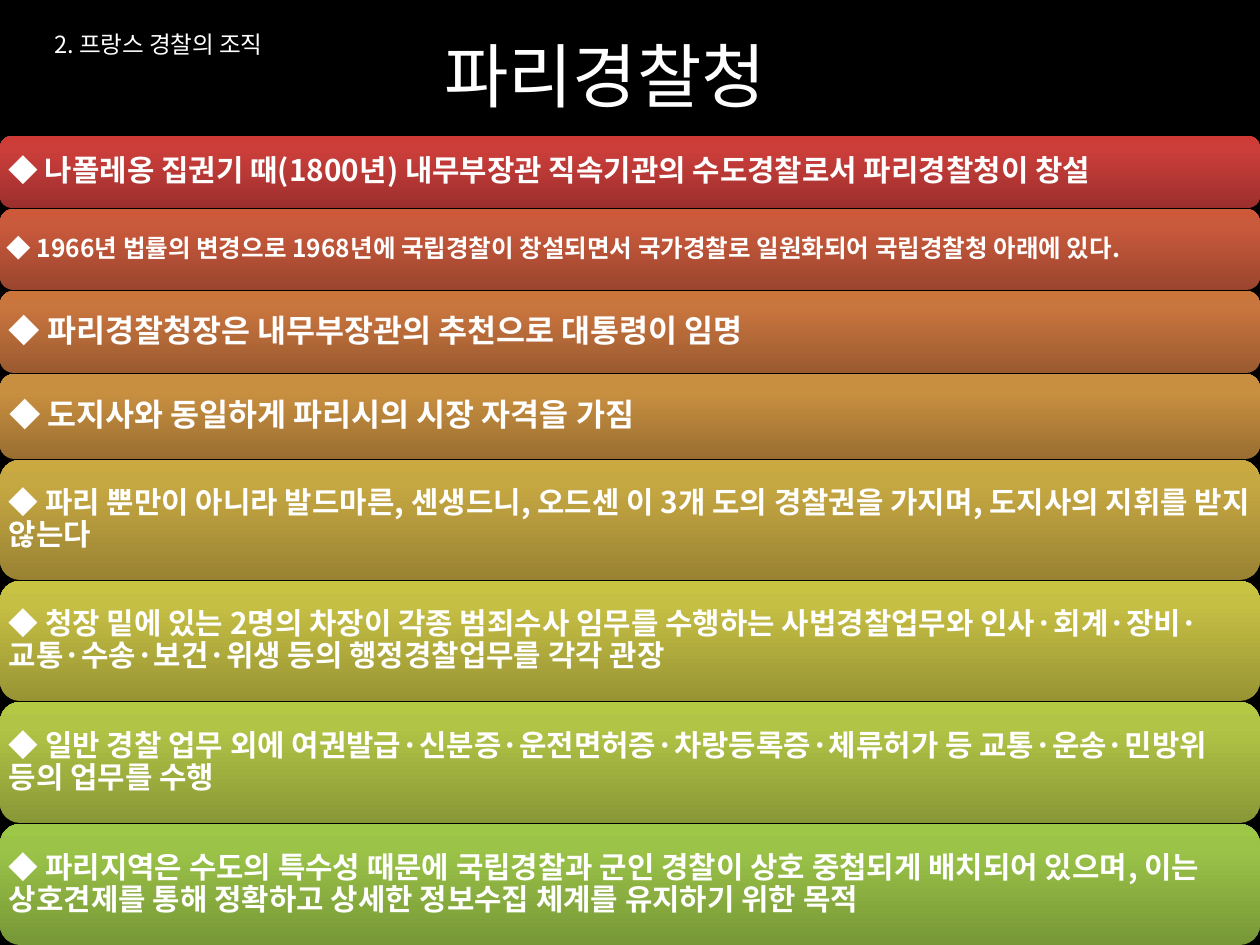
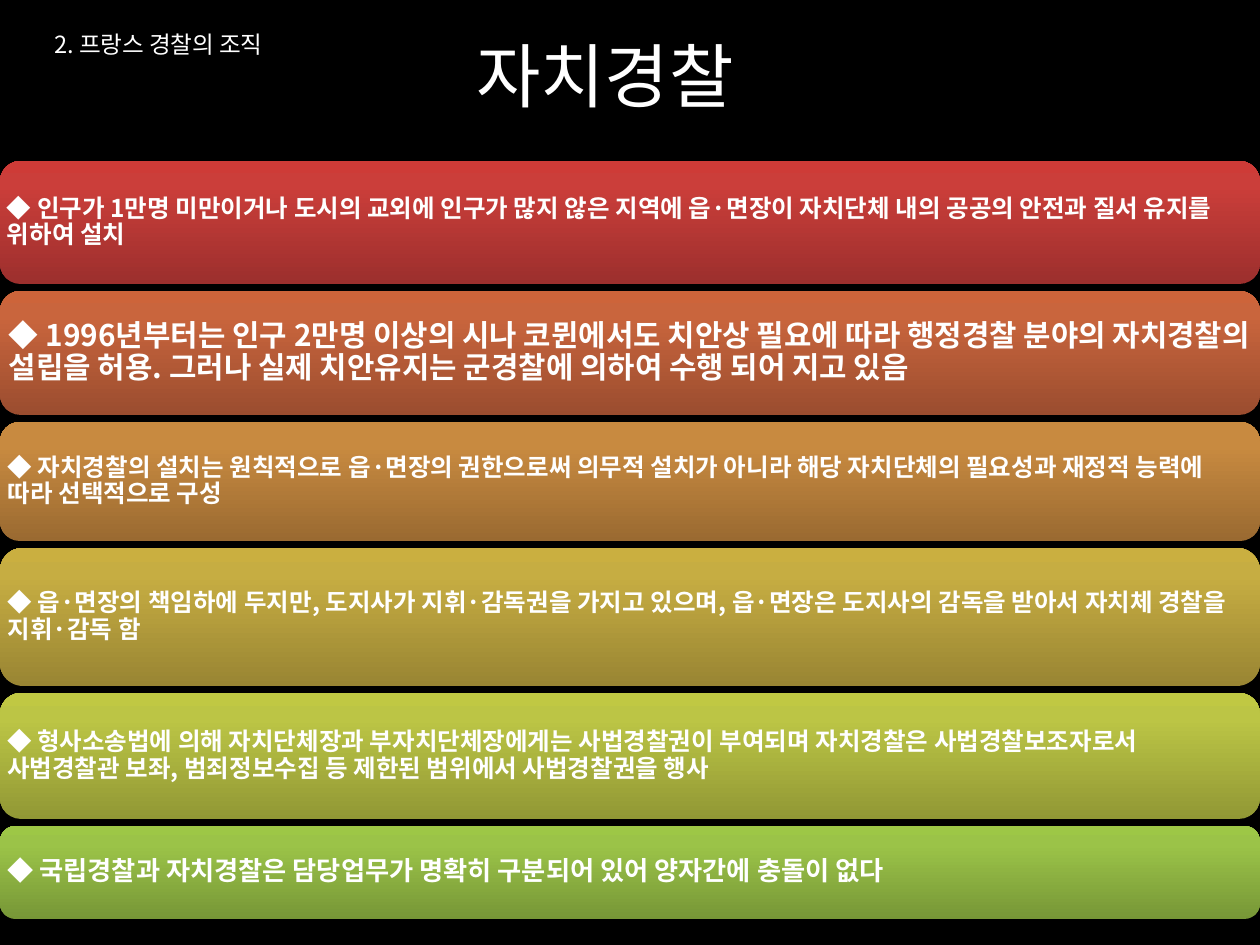
from colorsys import hls_to_rgb, rgb_to_hls
from copy import deepcopy
from dataclasses import dataclass

from lxml.etree import SubElement
from pptx import Presentation
from pptx.dml.color import RGBColor
from pptx.enum.shapes import MSO_SHAPE
from pptx.enum.text import MSO_ANCHOR, MSO_AUTO_SIZE, PP_ALIGN
from pptx.oxml.ns import qn
from pptx.util import Pt

EMU_PER_PX = 914400 / 126
TITLE_ONLY_LAYOUT = 5
ROUND_RECT_TEXT_INSET = 0.29 / 6


@dataclass(frozen=True)
class Theme:
    """Colours, font and type sizes shared by the slides."""

    font: str = "Noto Sans CJK KR"
    text: str = "FFFFFF"
    background: str = "000000"
    shadow: str = "000000"
    title_size: float = 40
    section_size: float = 13.5
    line_spacing: float = 0.9
    band_stops: tuple = (
        (0, "9C2F2D", "779737"),
        (0.8, "CB3E3A", "9BC348"),
        (1, "CE3B37", "9DC746"),
    )


SECTION = "2. 프랑스 경찰의 조직"

PARIS_BANDS = [
    (72, 17, "나폴레옹 집권기 때(1800년) 내무부장관 직속기관의 수도경찰로서 파리경찰청이 창설"),
    (81, 14, "1966년 법률의 변경으로 1968년에 국립경찰이 창설되면서 국가경찰로 일원화되어 국립경찰청 아래에 있다."),
    (82, 18, "파리경찰청장은 내무부장관의 추천으로 대통령이 임명"),
    (85, 18, "도지사와 동일하게 파리시의 시장 자격을 가짐"),
    (120, 17, "파리 뿐만이 아니라 발드마른, 센생드니, 오드센 이 3개 도의 경찰권을 가지며, "
              "도지사의 지휘를 받지 않는다"),
    (120, 17, "청장 밑에 있는 2명의 차장이 각종 범죄수사 임무를 수행하는 사법경찰업무와 "
              "인사·회계·장비·교통·수송·보건·위생 등의 행정경찰업무를 각각 관장"),
    (121, 17, "일반 경찰 업무 외에 여권발급·신분증·운전면허증·차랑등록증·체류허가 등 "
              "교통·운송·민방위 등의 업무를 수행"),
    (121, 17, "파리지역은 수도의 특수성 때문에 국립경찰과 군인 경찰이 상호 중첩되게 배치되어 있으며, "
              "이는 상호견제를 통해 정확하고 상세한 정보수집 체계를 유지하기 위한 목적"),
]

MUNICIPAL_BANDS = [
    (123, 14, "인구가 1만명 미만이거나 도시의 교외에 인구가 많지 않은 지역에 읍·면장이 "
              "자치단체 내의 공공의 안전과 질서 유지를 위하여 설치"),
    (124, 17, "1996년부터는 인구 2만명 이상의 시나 코뮌에서도 치안상 필요에 따라 행정경찰 분야의 "
              "자치경찰의 설립을 허용. 그러나 실제 치안유지는 군경찰에 의하여 수행 되어 지고 있음"),
    (119, 14, "자치경찰의 설치는 원칙적으로 읍·면장의 권한으로써 의무적 설치가 아니라 "
              "해당 자치단체의 필요성과 재정적 능력에 따라 선택적으로 구성"),
    (138, 14, "읍·면장의 책임하에 두지만, 도지사가 지휘·감독권을 가지고 있으며, "
              "읍·면장은 도지사의 감독을 받아서 자치체 경찰을 지휘·감독 함"),
    (126, 14, "형사소송법에 의해 자치단체장과 부자치단체장에게는 사법경찰권이 부여되며 "
              "자치경찰은 사법경찰보조자로서 사법경찰관 보좌, "
              "범죄정보수집 등 제한된 범위에서 사법경찰권을 행사"),
    (93, 15, "국립경찰과 자치경찰은 담당업무가 명확히 구분되어 있어 양자간에 충돌이 없다"),
]


def px(length):
    """Turn pixels into EMU."""
    return round(length * EMU_PER_PX)


def blend_hue(first, last, share):
    """Mix two hex colours along hue, lightness and saturation."""
    start, end = (
        rgb_to_hls(*(channel / 255 for channel in RGBColor.from_string(colour)))
        for colour in (first, last)
    )
    mixed = hls_to_rgb(*(a + (b - a) * share for a, b in zip(start, end)))
    return RGBColor(*(round(channel * 255) for channel in mixed))


class Deck:
    """Holds the style and the current slide, and draws each kind of element."""

    def __init__(self, theme):
        """Start an empty 4:3 presentation."""
        self.theme = theme
        self.slide = None
        self.presentation = Presentation()
        self.presentation.slide_width = px(1260)
        self.presentation.slide_height = px(945)

    def add_slide(self, title, section):
        """Add a slide with its background, section label and title."""
        layout = self.presentation.slide_layouts[TITLE_ONLY_LAYOUT]
        self.slide = self.presentation.slides.add_slide(layout)
        fill = self.slide.background.fill
        fill.solid()
        fill.fore_color.rgb = RGBColor.from_string(self.theme.background)
        self.add_section_label(section)
        self.set_title(title)

    def add_run(self, paragraph, text, size, bold=False):
        """Add one run in the theme font and colour."""
        run = paragraph.add_run()
        run.text = text
        run.font.size = Pt(size)
        run.font.bold = bold
        run.font.name = self.theme.font
        run.font.color.rgb = RGBColor.from_string(self.theme.text)
        east_asian = SubElement(run._r.get_or_add_rPr(), qn("a:ea"))
        east_asian.set("typeface", self.theme.font)

    def add_section_label(self, text):
        """Add the small section label at the top left."""
        label = self.slide.shapes.add_textbox(px(15), px(26), px(287), px(39))
        frame = label.text_frame
        frame.word_wrap = True
        frame.vertical_anchor = MSO_ANCHOR.MIDDLE
        paragraph = frame.paragraphs[0]
        paragraph.alignment = PP_ALIGN.CENTER
        paragraph.line_spacing = self.theme.line_spacing
        self.add_run(paragraph, text, self.theme.section_size)

    def set_title(self, text):
        """Place and fill the title placeholder."""
        title = self.slide.shapes.title
        title.left, title.top, title.width, title.height = map(px, (94, 26, 1022, 97))
        frame = title.text_frame
        frame.auto_size = MSO_AUTO_SIZE.SHAPE_TO_FIT_TEXT
        frame.vertical_anchor = MSO_ANCHOR.TOP
        paragraph = frame.paragraphs[0]
        paragraph.alignment = PP_ALIGN.CENTER
        self.add_run(paragraph, text, self.theme.title_size)

    def fill_band(self, band, share):
        """Give a band the gradient found at a share of the colour range."""
        band.fill.gradient()
        band.fill.gradient_angle = 90
        stop_list = band.element.spPr.find(".//" + qn("a:gsLst"))
        stop_list.append(deepcopy(stop_list[0]))
        for stop, (position, first, last) in zip(band.fill.gradient_stops, self.theme.band_stops):
            stop.position = position
            stop.color.rgb = blend_hue(first, last, share)
        band.line.fill.background()

    def add_shadow(self, shape):
        """Add a soft shadow below a shape."""
        shape.shadow.inherit = False
        effects = shape.element.spPr.find(qn("a:effectLst"))
        shadow = SubElement(effects, qn("a:outerShdw"), blurRad="40000", dist="23000",
                            dir="5400000", rotWithShape="0")
        colour = SubElement(shadow, qn("a:srgbClr"), val=self.theme.shadow)
        SubElement(colour, qn("a:alpha"), val="35000")

    def add_band(self, top, height, share, size, text):
        """Add one full-width rounded band with its statement."""
        band = self.slide.shapes.add_shape(
            MSO_SHAPE.ROUNDED_RECTANGLE, 0, px(top), px(1260), px(height))
        self.fill_band(band, share)
        self.add_shadow(band)
        frame = band.text_frame
        frame.word_wrap = True
        frame.vertical_anchor = MSO_ANCHOR.MIDDLE
        margin = px(max(0, round(size * 0.525 - height * ROUND_RECT_TEXT_INSET)))
        frame.margin_left = frame.margin_right = margin
        frame.margin_top = frame.margin_bottom = margin
        paragraph = frame.paragraphs[0]
        paragraph.alignment = PP_ALIGN.LEFT
        paragraph.line_spacing = self.theme.line_spacing
        paragraph.space_after = Pt(round(size * 0.35))
        self.add_run(paragraph, "◆ ", size)
        self.add_run(paragraph, text, size, bold=True)

    def add_bands(self, top, gap, bands):
        """Stack bands from red to green with an equal gap."""
        for index, (height, size, text) in enumerate(bands):
            self.add_band(top, height, index / (len(bands) - 1), size, text)
            top += height + gap


def main():
    """Build and save both slides."""
    deck = Deck(Theme())
    deck.add_slide("파리경찰청", SECTION)
    deck.add_bands(136, 1, PARIS_BANDS)
    deck.add_slide("자치경찰", SECTION)
    deck.add_bands(161, 7, MUNICIPAL_BANDS)
    deck.presentation.save("out.pptx")


if __name__ == "__main__":
    main()
